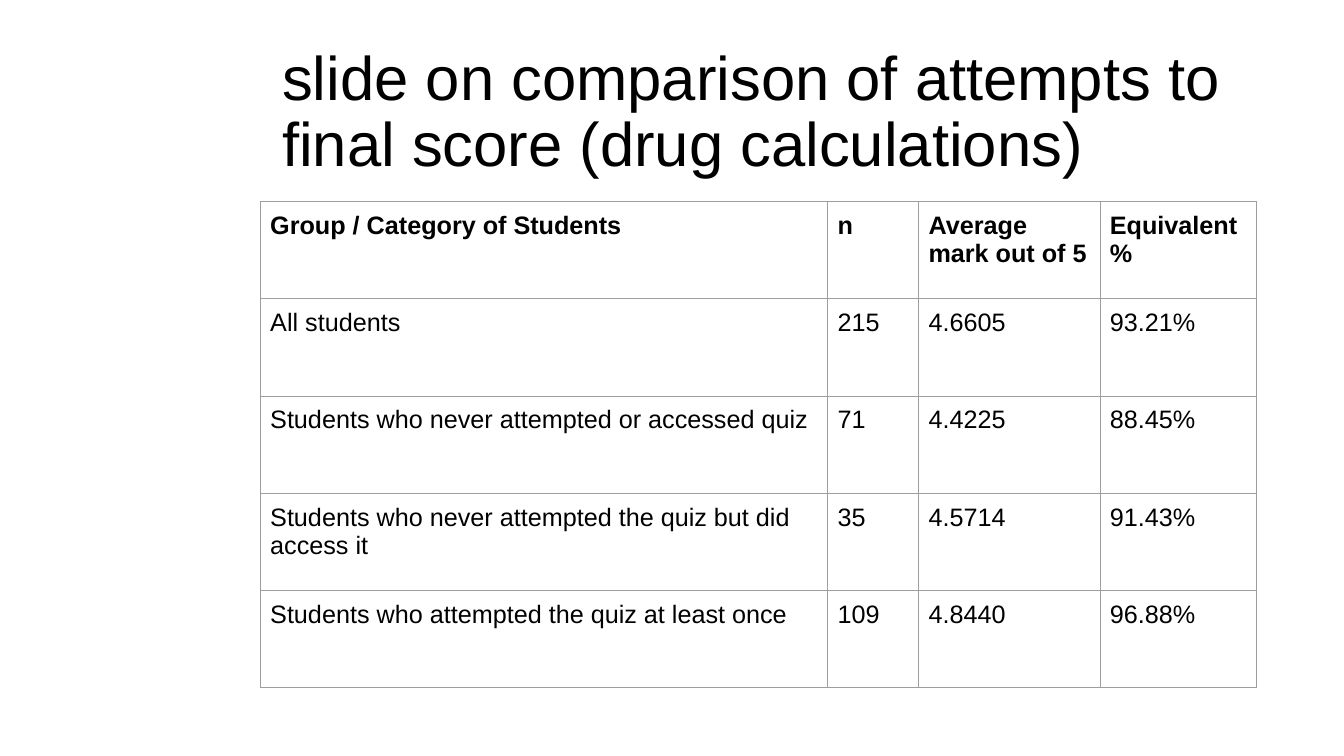
from dataclasses import dataclass

from lxml import etree
from pptx import Presentation
from pptx import util as u
from pptx.dml import color
from pptx.enum import text
from pptx.oxml import ns
from pptx.table import _Cell
from pptx.text.text import TextFrame

COLORS = {"text": "000000", "border": "9E9E9E"}
FONT = "Arial"
BORDER_WIDTH = u.Pt(0.75)
ROW_HEIGHT = u.Cm(2.45)
CELL_MARGIN = u.Cm(0.25)


@dataclass(frozen=True)
class Column:
    heading: str
    width: float


@dataclass(frozen=True)
class StudentGroup:
    name: str
    count: str
    average: str
    percent: str

    def values(self) -> list[str]:
        return [self.name, self.count, self.average, self.percent]


COLUMNS = [
    Column("Group / Category of Students", 14.3),
    Column("n", 2.29),
    Column("Average mark out of 5", 4.57),
    Column("Equivalent %", 3.94),
]

GROUPS = [
    StudentGroup("All students", "215", "4.6605", "93.21%"),
    StudentGroup("Students who never attempted or accessed quiz", "71", "4.4225", "88.45%"),
    StudentGroup("Students who never attempted the quiz but did access it", "35", "4.5714", "91.43%"),
    StudentGroup("Students who attempted the quiz at least once", "109", "4.8440", "96.88%"),
]


def write_text(frame: TextFrame, content: str, *, size: float, bold: bool = False,
               line_spacing: float = 1.0) -> None:
    frame.word_wrap = True
    paragraph = frame.paragraphs[0]
    paragraph.alignment = text.PP_ALIGN.LEFT
    paragraph.line_spacing = line_spacing
    run = paragraph.add_run()
    run.text = content
    run.font.name = FONT
    run.font.size = u.Pt(size)
    run.font.bold = bold
    run.font.color.rgb = color.RGBColor.from_string(COLORS["text"])


def draw_borders(cell: _Cell) -> None:
    properties = cell._tc.get_or_add_tcPr()
    for side in ("a:lnL", "a:lnR", "a:lnT", "a:lnB"):
        line = etree.SubElement(properties, ns.qn(side), w=str(BORDER_WIDTH))
        fill = etree.SubElement(line, ns.qn("a:solidFill"))
        etree.SubElement(fill, ns.qn("a:srgbClr"), val=COLORS["border"])


def add_title(slide, content: str) -> None:
    box = slide.shapes.add_textbox(u.Cm(6.86), u.Cm(1.02), u.Cm(25.07), u.Cm(3.68))
    box.text_frame.vertical_anchor = text.MSO_ANCHOR.MIDDLE
    write_text(box.text_frame, content, size=44, line_spacing=0.9)


def add_score_table(slide) -> None:
    rows = [[column.heading for column in COLUMNS]] + [group.values() for group in GROUPS]
    width = u.Cm(sum(column.width for column in COLUMNS))
    shape = slide.shapes.add_table(len(rows), len(COLUMNS), u.Cm(6.56), u.Cm(5.08),
                                   width, ROW_HEIGHT * len(rows))
    table = shape.table
    table.first_row = False
    table.horz_banding = False
    for column, layout in zip(table.columns, COLUMNS):
        column.width = u.Cm(layout.width)
    for row_index, values in enumerate(rows):
        table.rows[row_index].height = ROW_HEIGHT
        for column_index, value in enumerate(values):
            cell = table.cell(row_index, column_index)
            cell.margin_left = cell.margin_right = CELL_MARGIN
            cell.margin_top = cell.margin_bottom = CELL_MARGIN
            draw_borders(cell)
            cell.fill.background()
            write_text(cell.text_frame, value, size=18, bold=row_index == 0)


def main() -> None:
    presentation = Presentation()
    presentation.slide_width = u.Cm(33.87)
    presentation.slide_height = u.Cm(19.05)
    slide = presentation.slides.add_slide(presentation.slide_layouts[6])
    add_title(slide, "slide on comparison of attempts to final score (drug calculations)")
    add_score_table(slide)
    presentation.save("out.pptx")


if __name__ == "__main__":
    main()
